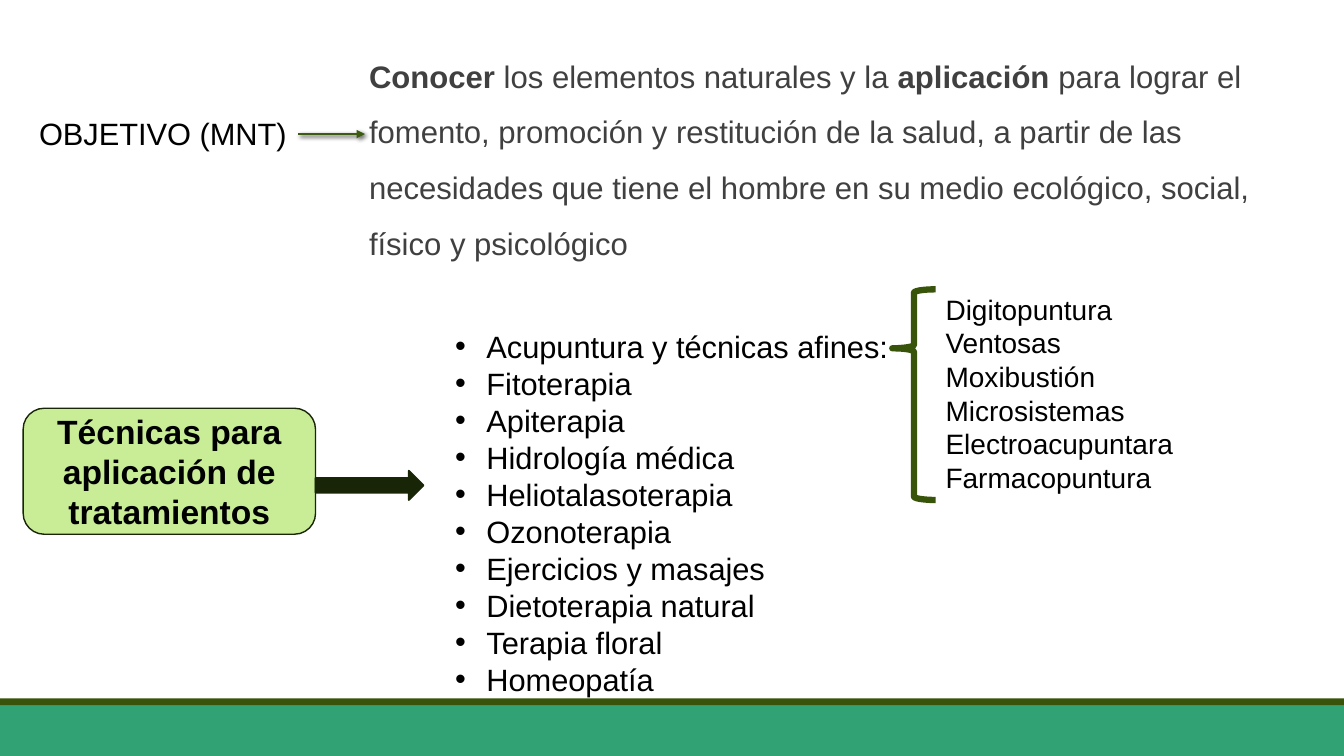
from lxml.etree import SubElement
from pptx import Presentation
from pptx.dml.color import RGBColor
from pptx.enum.shapes import MSO_CONNECTOR, MSO_SHAPE
from pptx.enum.text import MSO_ANCHOR, MSO_AUTO_SIZE, PP_ALIGN
from pptx.oxml.ns import qn
from pptx.util import Inches, Pt

COLORS = {"band": "31A274", "dark": "38540A", "box": "C9ED96", "deep": "182506",
          "arrow": "3C5B10", "body": "404040", "text": "000000"}

prs = Presentation()
prs.slide_width, prs.slide_height = Inches(13.33), Inches(7.5)
slide = prs.slides.add_slide(prs.slide_layouts[1])
slide.shapes.title.element.getparent().remove(slide.shapes.title.element)
aim = slide.placeholders[1]


def add_block(kind, box, fill=None, line=None, weight=1):
    block = slide.shapes.add_shape(kind, *map(Inches, box))
    block.shadow.inherit = False
    if fill:
        block.fill.solid()
        block.fill.fore_color.rgb = RGBColor.from_string(COLORS[fill])
    else:
        block.fill.background()
    if line:
        block.line.color.rgb = RGBColor.from_string(COLORS[line])
        block.line.width = Pt(weight)
    else:
        block.line.fill.background()
    return block


def write(paragraph, text, size, color="text", bold=False, align=PP_ALIGN.LEFT):
    paragraph.alignment = align
    run = paragraph.add_run()
    run.text = text
    formats = {"name": "Arial", "size": Pt(size), "bold": bold}
    for key, value in formats.items():
        setattr(run.font, key, value)
    run.font.color.rgb = RGBColor.from_string(COLORS[color])


# Footer bands
add_block(MSO_SHAPE.RECTANGLE, (0, 7, 13.33, 0.5), "band")
add_block(MSO_SHAPE.RECTANGLE, (0, 6.93, 13.33, 0.07), "dark")

# Objective statement
aim.left, aim.top, aim.width, aim.height = map(Inches, (3.66, 0.33, 9.06, 2.34))
frame_formats = {"margin_left": 0, "margin_right": 0, "word_wrap": True,
                 "auto_size": MSO_AUTO_SIZE.NONE, "vertical_anchor": MSO_ANCHOR.TOP}
for key, value in frame_formats.items():
    setattr(aim.text_frame, key, value)
statement = aim.text_frame.paragraphs[0]
spacing = {"line_spacing": 1.5, "space_before": Pt(12), "space_after": Pt(2)}
for key, value in spacing.items():
    setattr(statement, key, value)
for text, bold in [
    ("Conocer ", True),
    ("los elementos naturales y la ", False),
    ("aplicación ", True),
    ("para lograr el fomento, promoción y restitución de la salud, a partir de las "
     "necesidades que tiene el hombre en su medio ecológico, social, físico y psicológico", False),
]:
    write(statement, text, 22.2, "body", bold)
properties = statement._p.get_or_add_pPr()
properties.set("marL", "0")
properties.set("indent", "0")
SubElement(properties, qn("a:buNone"))

# Objective label and its arrow
label = slide.shapes.add_textbox(*map(Inches, (0.27, 1.09, 2.69, 0.47)))
label.text_frame.word_wrap = False
label.text_frame.auto_size = MSO_AUTO_SIZE.SHAPE_TO_FIT_TEXT
write(label.text_frame.paragraphs[0], "OBJETIVO (MNT)", 22, align=PP_ALIGN.CENTER)

pointer = slide.shapes.add_connector(MSO_CONNECTOR.STRAIGHT, *map(Inches, (2.96, 1.33, 3.62, 1.33)))
pointer.line.color.rgb = RGBColor.from_string(COLORS["arrow"])
pointer.line.width = Pt(2)
SubElement(pointer.line._ln, qn("a:tailEnd"), type="triangle")
effects = SubElement(pointer._element.spPr, qn("a:effectLst"))
shadow = SubElement(effects, qn("a:outerShdw"), blurRad=str(Pt(3)), dist=str(Pt(2)),
                    dir=str(45 * 60000), rotWithShape="0")
shade = SubElement(shadow, qn("a:srgbClr"), val=COLORS["text"])
SubElement(shade, qn("a:alpha"), val="60000")

# Techniques box and its arrow
techniques = add_block(MSO_SHAPE.ROUNDED_RECTANGLE, (0.23, 4.05, 2.9, 1.25), "box", "deep")
techniques.text_frame.vertical_anchor = MSO_ANCHOR.MIDDLE
write(techniques.text_frame.paragraphs[0], "Técnicas para aplicación de tratamientos", 24,
      bold=True, align=PP_ALIGN.CENTER)
add_block(MSO_SHAPE.RIGHT_ARROW, (3.13, 4.67, 1.07, 0.29), "deep", "deep", 1.25)

# Bulleted therapies
therapies = add_block(MSO_SHAPE.ROUNDED_RECTANGLE, (4.2, 2.87, 5.08, 4.43))
therapies.text_frame.vertical_anchor = MSO_ANCHOR.MIDDLE
for i, therapy in enumerate([
    "Acupuntura y técnicas afines:", "Fitoterapia", "Apiterapia", "Hidrología médica",
    "Heliotalasoterapia", "Ozonoterapia", "Ejercicios y masajes", "Dietoterapia natural",
    "Terapia floral", "Homeopatía",
]):
    item = therapies.text_frame.add_paragraph() if i else therapies.text_frame.paragraphs[0]
    write(item, therapy, 22)
    properties = item._p.get_or_add_pPr()
    properties.set("marL", str(Inches(0.31)))
    properties.set("indent", str(-Inches(0.31)))
    SubElement(properties, qn("a:buFont"), typeface="Arial")
    SubElement(properties, qn("a:buChar"), char="•")

# Acupuncture variants with their brace
variants = slide.shapes.add_textbox(*map(Inches, (9.28, 2.85, 2.63, 2.12)))
variants.text_frame.word_wrap = True
variants.text_frame.auto_size = MSO_AUTO_SIZE.SHAPE_TO_FIT_TEXT
for i, variant in enumerate(["Digitopuntura", "Ventosas", "Moxibustión", "Microsistemas",
                             "Electroacupuntara", "Farmacopuntura"]):
    item = variants.text_frame.add_paragraph() if i else variants.text_frame.paragraphs[0]
    write(item, variant, 20)

brace = add_block(MSO_SHAPE.LEFT_BRACE, (8.85, 2.87, 0.43, 2.09), line="dark", weight=4.5)
brace.adjustments[0], brace.adjustments[1] = 0.08, 0.28

prs.save("out.pptx")
